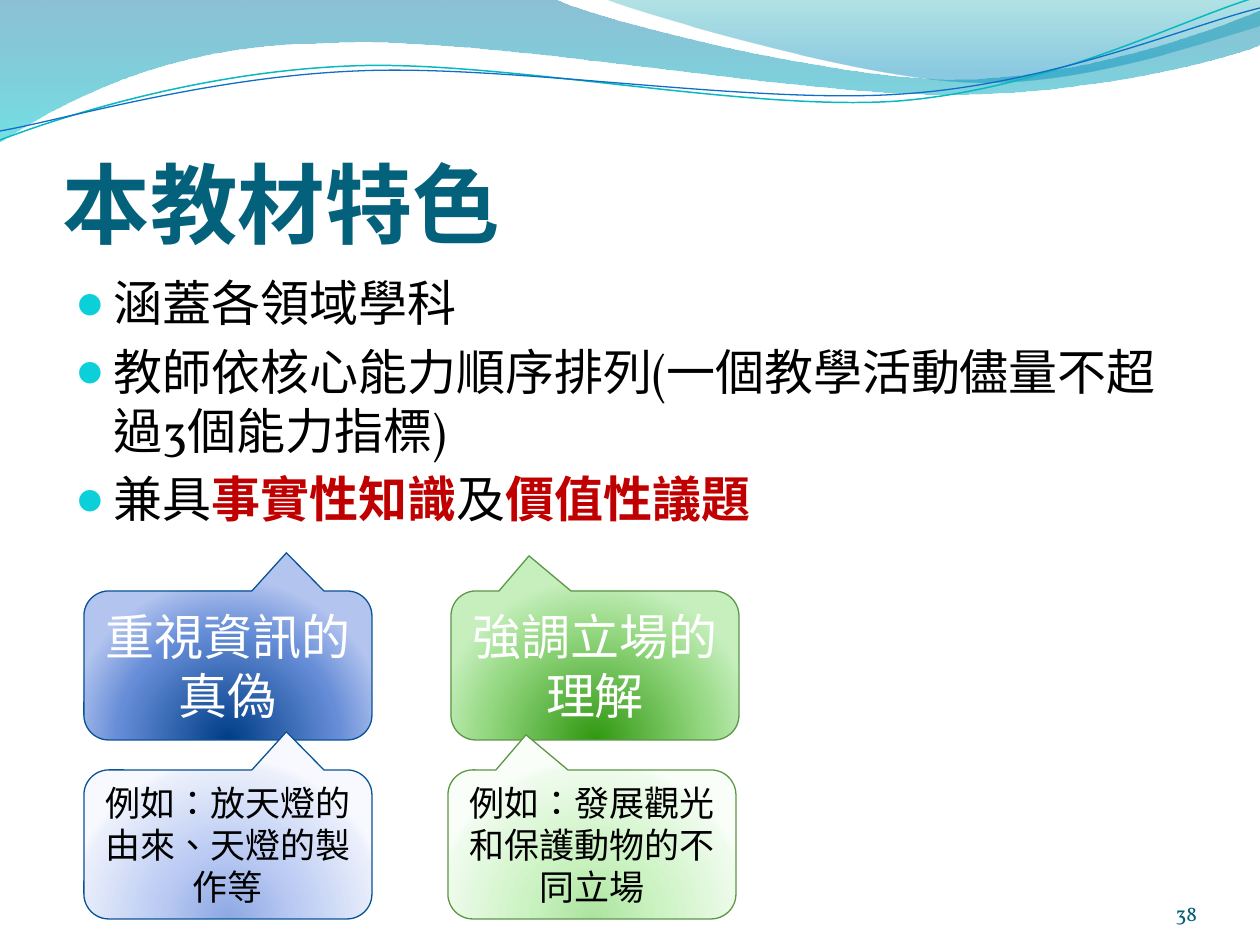
"""Build the slide on the features of the teaching material."""
from lxml.etree import SubElement
from pptx import Presentation
from pptx.dml.color import RGBColor
from pptx.enum.shapes import MSO_SHAPE
from pptx.enum.text import MSO_ANCHOR as ANCHOR, PP_ALIGN as ALIGN
from pptx.oxml.ns import qn
from pptx.util import Emu, Pt

SCALE = 914400 / 126
W, H = 1260, 945

THEME = dict(
    title="04617B", text="000000", accent="C00000", light="FFFFFF",
    bullet="0BD0D9", number="045D75",
    head_font="Calibri", body_font="Vollkorn", cjk_font="Noto Sans CJK TC",
    title_size=50, body_size=28, note_size=20, number_size=12, leading=1.2,
)
BLUE = dict(
    line="095295", tip=(0.203, -0.756),
    strong=[(0, "003D87"), (68, "668DD7"), (100, "B3C4EF")],
    pale=[(0, "8DA8E3"), (43, "BBCBF3"), (93, "EAEFFB"), (100, "F7F9FF")],
)
GREEN = dict(
    line="5B9747", tip=(-0.229, -0.736),
    strong=[(0, "319811"), (68, "95D882"), (100, "C6EFBD")],
    pale=[(0, "ACE49F"), (43, "CDF3C4"), (93, "EFFBED"), (100, "F9FFF8")],
)

TITLE = "本教材特色"
NUMBER = "38"
RED = dict(color=THEME["accent"], bold=True)
CJK = dict(font=THEME["cjk_font"])
BULLETS = [
    [("涵蓋各領域學科", {})],
    [("教師依核心能力順序排列(一個教學活動儘量不超過3個能力指標)", {})],
    [("兼具", {}), ("事實性知識", RED), ("及", {}), ("價值性議題", RED)],
]
CALLOUTS = [
    (84, 591, BLUE, "strong", [("重視資訊的真偽", {})]),
    (451, 591, GREEN, "strong", [("強調立場的理解", {})]),
    (84, 770, BLUE, "pale", [("例如", {}), ("：放天燈的由來、天燈的製作等", CJK)]),
    (448, 770, GREEN, "pale",
     [("例如", {}), ("：發展觀光", CJK), ("和保護動物的不同立場", {})]),
]
CALLOUT_SIZE = (288, 149)

WAVES = [
    dict(path=[(0, -1), (554, -1), (600, 21, 837, 79, 955, 79),
               (1075, 79, 1207, 33, 1260, 11), (1261, 45),
               (1238, 55, 1096, 96, 940, 94), (784, 94, 481, 35, 324, 43),
               (163, 44, 58, 105, -1, 142), (0, -1)],
         stops=[(0, "0074A1", 45), (100, "00C6CF", 55)]),
    dict(path=[(604, -1), (641, 14, 859, 78, 969, 82),
               (1079, 87, 1211, 40, 1260, 26), (1260, 0), (604, -1)],
         stops=[(0, "00A1A9", 30), (80, "008BBF", 45)]),
    dict(path=[(0, 140), (60, 117, 199, 72, 349, 66),
               (498, 59, 747, 112, 898, 101), (1050, 89, 1182, 19, 1257, -3)],
         line=("0AB8BF", 0.85)),
    dict(path=[(0, 131), (59, 121, 207, 77, 357, 71),
               (508, 64, 752, 105, 903, 94), (1053, 84, 1187, 26, 1260, 8)],
         line=("0F6FC6", 0.75)),
]


def px(n):
    return Emu(round(n * SCALE))


def rgb(value):
    return RGBColor.from_string(value)


def add(parent, tag, **attrs):
    return SubElement(parent, qn(tag), {k: str(v) for k, v in attrs.items()})


def add_color(parent, value, opacity=100):
    color = add(parent, "a:srgbClr", val=value)
    if opacity < 100:
        add(color, "a:alpha", val=opacity * 1000)


def set_gradient(sp, stops, radial=False):
    sp.fill.gradient()
    grad = sp._element.spPr.find(qn("a:gradFill"))
    for child in list(grad):
        grad.remove(child)
    gs_list = add(grad, "a:gsLst")
    for pos, *color in stops:
        add_color(add(gs_list, "a:gs", pos=pos * 1000), *color)
    if radial:
        shade = add(grad, "a:path", path="circle")
        add(shade, "a:fillToRect", l=50000, t=130000, r=50000, b=-30000)
    else:
        add(grad, "a:lin", ang=5400000, scaled=1)


def set_line(sp, color, width):
    sp.line.color.rgb = rgb(color)
    sp.line.width = Pt(width)


def set_bullet(p):
    pPr = p._p.get_or_add_pPr()
    pPr.set("marL", str(px(38)))
    pPr.set("indent", str(-px(38)))
    add_color(add(pPr, "a:buClr"), THEME["bullet"])
    add(pPr, "a:buSzPct", val=95000)
    add(pPr, "a:buFont", typeface=THEME["head_font"])
    add(pPr, "a:buChar", char="●")


def write(sp, paragraphs, size, color=THEME["text"], font=THEME["body_font"],
          bold=False, align=ALIGN.LEFT, anchor=ANCHOR.TOP,
          insets=(13, 6, 13, 6), bullets=False):
    tf = sp.text_frame
    tf.word_wrap = True
    tf.vertical_anchor = anchor
    (tf.margin_left, tf.margin_top,
     tf.margin_right, tf.margin_bottom) = map(px, insets)
    for i, runs in enumerate(paragraphs):
        p = tf.add_paragraph() if i else tf.paragraphs[0]
        if bullets:
            set_bullet(p)
        p.alignment = align
        p.line_spacing = Pt(size * THEME["leading"])
        p.space_before = Pt(size * 0.2 if i else 0)
        for text, style in runs:
            r = p.add_run()
            r.text = text
            r.font.size = Pt(size)
            r.font.bold = style.get("bold", bold)
            r.font.color.rgb = rgb(style.get("color", color))
            r.font.name = style.get("font", font)
            rPr = r._r.get_or_add_rPr()
            rPr.set("lang", "zh-TW")
            add(rPr, "a:ea", typeface=THEME["cjk_font"])


def bend(sp, path):
    outline = next(sp._element.iter(qn("a:path")))
    segments = outline.findall(qn("a:lnTo"))
    for step in path[1:]:
        if len(step) == 2:
            segments.pop(0)
            continue
        corners, segments = segments[:3], segments[3:]
        curve = add(outline, "a:cubicBezTo")
        corners[0].addprevious(curve)
        for corner in corners:
            curve.append(corner[0])
            outline.remove(corner)


def add_wave(shapes, path, stops=None, line=None):
    points = [(px(x), px(y)) for step in path
              for x, y in zip(step[::2], step[1::2])]
    builder = shapes.build_freeform(*points[0])
    builder.add_line_segments(points[1:], close=bool(stops))
    sp = builder.convert_to_shape()
    bend(sp, path)
    sp.shadow.inherit = False
    if stops:
        set_gradient(sp, stops)
        sp.line.fill.background()
    else:
        sp.fill.background()
        set_line(sp, *line)


def add_callout(shapes, x, y, palette, tone, runs):
    sp = shapes.add_shape(MSO_SHAPE.ROUNDED_RECTANGULAR_CALLOUT,
                          *map(px, (x, y, *CALLOUT_SIZE)))
    for i, value in enumerate((*palette["tip"], 0.167)):
        sp.adjustments[i] = value
    set_gradient(sp, palette[tone], radial=True)
    set_line(sp, palette["line"], 0.75)
    sp.shadow.inherit = False
    strong = tone == "strong"
    write(sp, [runs], THEME["body_size" if strong else "note_size"],
          color=THEME["light" if strong else "text"],
          align=ALIGN.CENTER, anchor=ANCHOR.MIDDLE)


def add_text(shapes, box, paragraphs, size, **style):
    write(shapes.add_textbox(*map(px, box)), paragraphs, size, **style)


def main():
    prs = Presentation()
    prs.slide_width, prs.slide_height = px(W), px(H)
    shapes = prs.slides.add_slide(prs.slide_layouts[6]).shapes
    for wave in WAVES:
        add_wave(shapes, **wave)
    add_text(shapes, (63, 97, 1134, 158), [[(TITLE, {})]],
             THEME["title_size"], color=THEME["title"],
             font=THEME["head_font"], bold=True, anchor=ANCHOR.BOTTOM,
             insets=(0, 6, 0, 0))
    add_text(shapes, (63, 267, 1134, 605), BULLETS, THEME["body_size"],
             bullets=True)
    for callout in CALLOUTS:
        add_callout(shapes, *callout)
    add_text(shapes, (1092, 876, 105, 50), [[(NUMBER, {})]],
             THEME["number_size"], color=THEME["number"], align=ALIGN.RIGHT,
             anchor=ANCHOR.BOTTOM, insets=(0, 0, 0, 0))
    prs.save("out.pptx")


if __name__ == "__main__":
    main()
